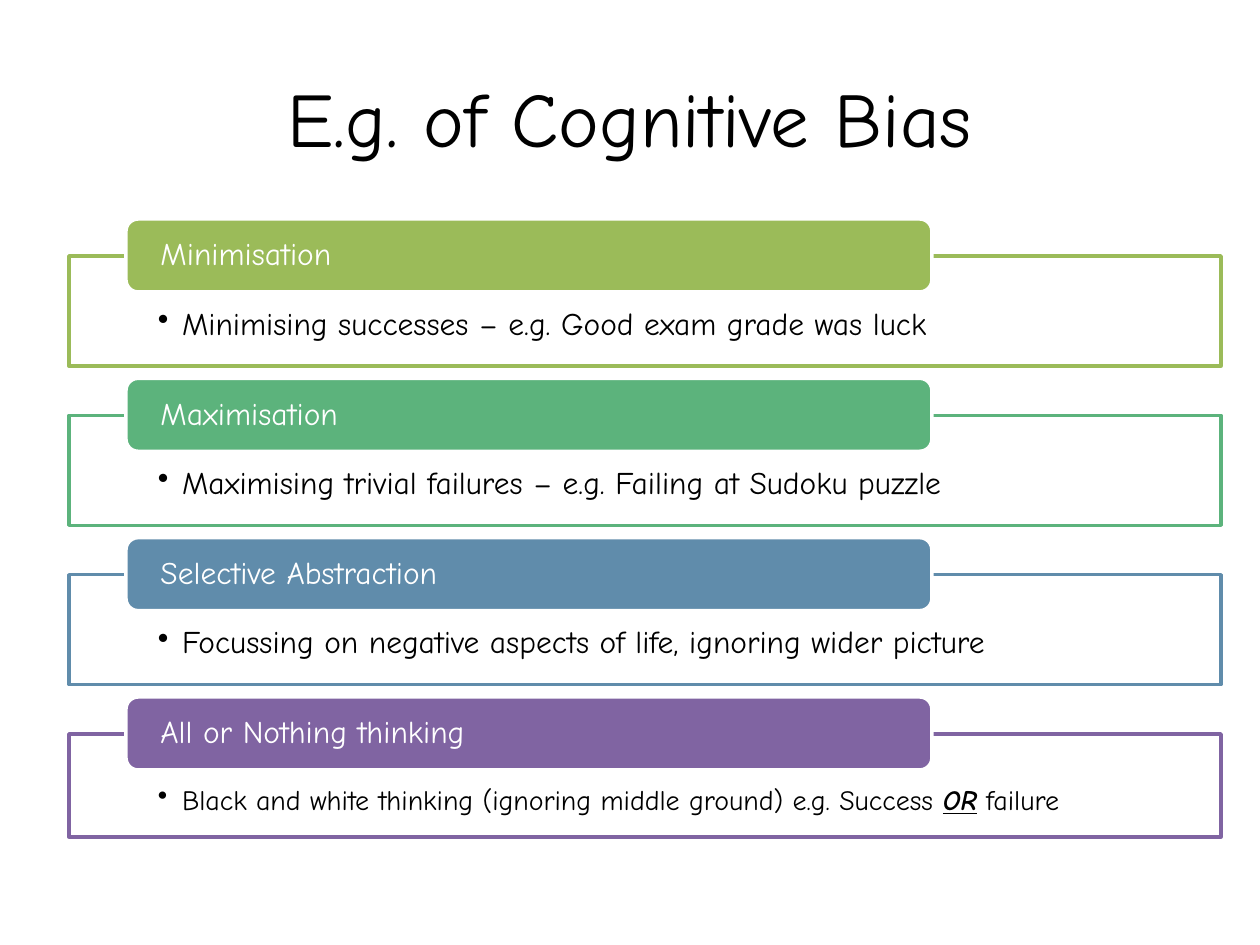
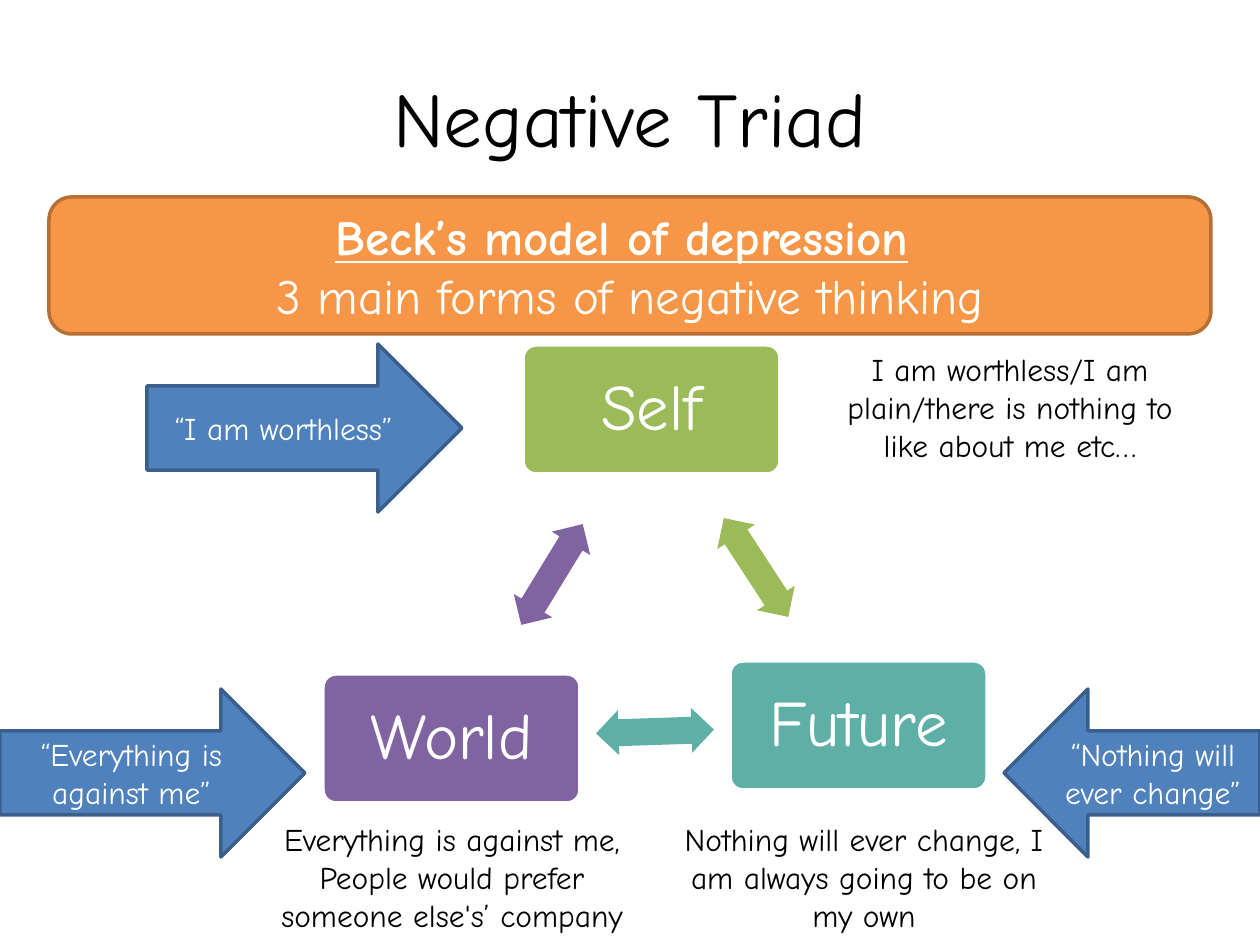
"""Builds two slides on cognitive bias and the negative triad."""
import dataclasses

import lxml.etree
import pptx
import pptx.dml.color
import pptx.enum.shapes
import pptx.enum.text
import pptx.oxml.ns
import pptx.util

SHAPE = pptx.enum.shapes.MSO_SHAPE
ALIGN = pptx.enum.text.PP_ALIGN
ANCHOR = pptx.enum.text.MSO_ANCHOR
PX = 914400 / 126


@dataclasses.dataclass(frozen=True)
class Theme:
    """Colours, font and type sizes."""
    font: str = "Comic Neue"
    white: str = "FFFFFF"
    black: str = "000000"
    lime: str = "9BBB59"
    green: str = "5CB37C"
    steel: str = "608CAB"
    purple: str = "8064A2"
    teal: str = "5EAFA6"
    orange: str = "F79646"
    orange_edge: str = "B76F34"
    blue: str = "4F81BD"
    blue_edge: str = "3A5F8C"
    title: int = 44
    node: int = 37
    banner: int = 28
    body: int = 18
    small: int = 16
    line: int = 2


THEME = Theme()
SLIDE_SIZE = (1260, 945)
TITLE_BOX = (63, 38, 1134, 158)
DEFAULT_INSETS = (13, 6, 13, 6)

BIAS_TITLE = "E.g. of Cognitive Bias"
BIASES = [
    ("Minimisation", THEME.lime, THEME.body, 110,
     [("Minimising successes – e.g. Good exam grade was luck", "")]),
    ("Maximisation", THEME.green, THEME.body, 110,
     [("Maximising trivial failures – e.g. Failing at Sudoku puzzle", "")]),
    ("Selective Abstraction", THEME.steel, THEME.body, 110,
     [("Focussing on negative aspects of life, ignoring wider picture", "")]),
    ("All or Nothing thinking", THEME.purple, THEME.small, 103,
     [("Black and white thinking (ignoring middle ground) e.g. Success ", ""),
      ("OR", "biu"), (" failure", "")]),
]
FIRST_PANEL_TOP, LAST_PANEL_TOP = 256, 734
PANEL_LEFT, PANEL_WIDTH = 69, 1152
LABEL_LEFT, LABEL_WIDTH, LABEL_HEIGHT, LABEL_RISE = 126, 806, 73, 37
BULLET_INDENT = 24

TRIAD_TITLE = "Negative Triad"
MODEL_BOX = (49, 197, 1162, 137)
MODEL_LINES = [
    [("Beck’s model of depression", "bu"), (" ", "")],
    [("3 main forms of negative thinking", "")],
]
NODE_SIZE = (257, 129)
NODES = [
    ("Self", THEME.lime, (523, 345)),
    ("Future", THEME.teal, (730, 661)),
    ("World", THEME.purple, (323, 674)),
]
LINK_SIZE = (118, 45)
LINKS = [
    (THEME.lime, (697, 545), 56.9),
    (THEME.teal, (596, 709), 178.1),
    (THEME.purple, (493, 552), 301.4),
]
THOUGHTS = [
    ("“I am worthless”", SHAPE.RIGHT_ARROW, (147, 344, 315, 168)),
    ("“Everything is against me”", SHAPE.RIGHT_ARROW, (0, 689, 305, 168)),
    ("“Nothing will ever change”", SHAPE.LEFT_ARROW, (1004, 689, 256, 168)),
]
NOTE_SIZE = (402, 127)
NOTES = [
    ("I am worthless/I am plain/there is nothing to like about me etc…", (809, 344)),
    ("Everything is against me, People would prefer someone else's’ company", (251, 814)),
    ("Nothing will ever change, I am always going to be on my own", (663, 814)),
]


def px(value):
    return pptx.util.Emu(round(value * PX))


def rgb(colour):
    return pptx.dml.color.RGBColor.from_string(colour)


def add_bullet(paragraph):
    properties = paragraph._p.get_or_add_pPr()
    properties.set("marL", str(px(BULLET_INDENT)))
    properties.set("indent", str(px(-BULLET_INDENT)))
    bullet = lxml.etree.SubElement(properties, pptx.oxml.ns.qn("a:buChar"))
    bullet.set("char", "•")


def write(shape, lines, size, colour=THEME.white, align=ALIGN.CENTER,
          anchor=ANCHOR.MIDDLE, insets=DEFAULT_INSETS, spacing=None, bullet=False):
    frame = shape.text_frame
    frame.word_wrap = True
    frame.vertical_anchor = anchor
    (frame.margin_left, frame.margin_top,
     frame.margin_right, frame.margin_bottom) = map(px, insets)
    for index, runs in enumerate(lines):
        paragraph = frame.add_paragraph() if index else frame.paragraphs[0]
        if bullet:
            add_bullet(paragraph)
        paragraph.alignment = align
        if spacing:
            paragraph.line_spacing = spacing
        for text, emphasis in runs:
            run = paragraph.add_run()
            run.text = text
            font = run.font
            font.name = THEME.font
            font.size = pptx.util.Pt(size)
            font.color.rgb = rgb(colour)
            font.bold = "b" in emphasis
            font.italic = "i" in emphasis
            font.underline = "u" in emphasis


def add_shape(slide, kind, box, fill, line=None, adjustments=()):
    shape = slide.shapes.add_shape(kind, *map(px, box))
    shape.shadow.inherit = False
    shape.fill.solid()
    shape.fill.fore_color.rgb = rgb(fill)
    if line:
        shape.line.color.rgb = rgb(line)
        shape.line.width = pptx.util.Pt(THEME.line)
    else:
        shape.line.fill.background()
    for index, value in enumerate(adjustments):
        shape.adjustments[index] = value
    return shape


def add_text(slide, box, text, size, anchor):
    shape = slide.shapes.add_textbox(*map(px, box))
    write(shape, [[(text, "")]], size, THEME.black, anchor=anchor)


def add_titled_slide(presentation, title):
    slide = presentation.slides.add_slide(presentation.slide_layouts[6])
    add_text(slide, TITLE_BOX, title, THEME.title, ANCHOR.MIDDLE)
    return slide


def build_bias_slide(presentation):
    slide = add_titled_slide(presentation, BIAS_TITLE)
    pitch = (LAST_PANEL_TOP - FIRST_PANEL_TOP) / (len(BIASES) - 1)
    for index, (name, colour, size, height, example) in enumerate(BIASES):
        top = FIRST_PANEL_TOP + index * pitch
        panel = add_shape(slide, SHAPE.RECTANGLE, (PANEL_LEFT, top, PANEL_WIDTH, height),
                          THEME.white, colour)
        write(panel, [example], size, THEME.black, ALIGN.LEFT, ANCHOR.TOP,
              (89, 52, 89, 16), 0.9, bullet=True)
        label = add_shape(slide, SHAPE.ROUNDED_RECTANGLE,
                          (LABEL_LEFT, top - LABEL_RISE, LABEL_WIDTH, LABEL_HEIGHT),
                          colour, THEME.white)
        write(label, [[(name, "")]], THEME.body, align=ALIGN.LEFT,
              insets=(31, 0, 31, 0), spacing=0.9)


def build_triad_slide(presentation):
    slide = add_titled_slide(presentation, TRIAD_TITLE)
    for name, colour, position in NODES:
        node = add_shape(slide, SHAPE.ROUNDED_RECTANGLE, position + NODE_SIZE,
                         colour, THEME.white, [0.1])
        write(node, [[(name, "")]], THEME.node, insets=(19, 19, 19, 19), spacing=0.9)
    for colour, position, angle in LINKS:
        link = add_shape(slide, SHAPE.LEFT_RIGHT_ARROW, position + LINK_SIZE,
                         colour, adjustments=[0.6, 0.5])
        link.rotation = angle
    model = add_shape(slide, SHAPE.ROUNDED_RECTANGLE, MODEL_BOX,
                      THEME.orange, THEME.orange_edge)
    write(model, MODEL_LINES, THEME.banner)
    for text, kind, box in THOUGHTS:
        arrow = add_shape(slide, kind, box, THEME.blue, THEME.blue_edge)
        write(arrow, [[(text, "")]], THEME.body)
    for text, position in NOTES:
        add_text(slide, position + NOTE_SIZE, text, THEME.body, ANCHOR.TOP)


def main():
    presentation = pptx.Presentation()
    presentation.slide_width, presentation.slide_height = map(px, SLIDE_SIZE)
    build_bias_slide(presentation)
    build_triad_slide(presentation)
    presentation.save("out.pptx")


if __name__ == "__main__":
    main()
